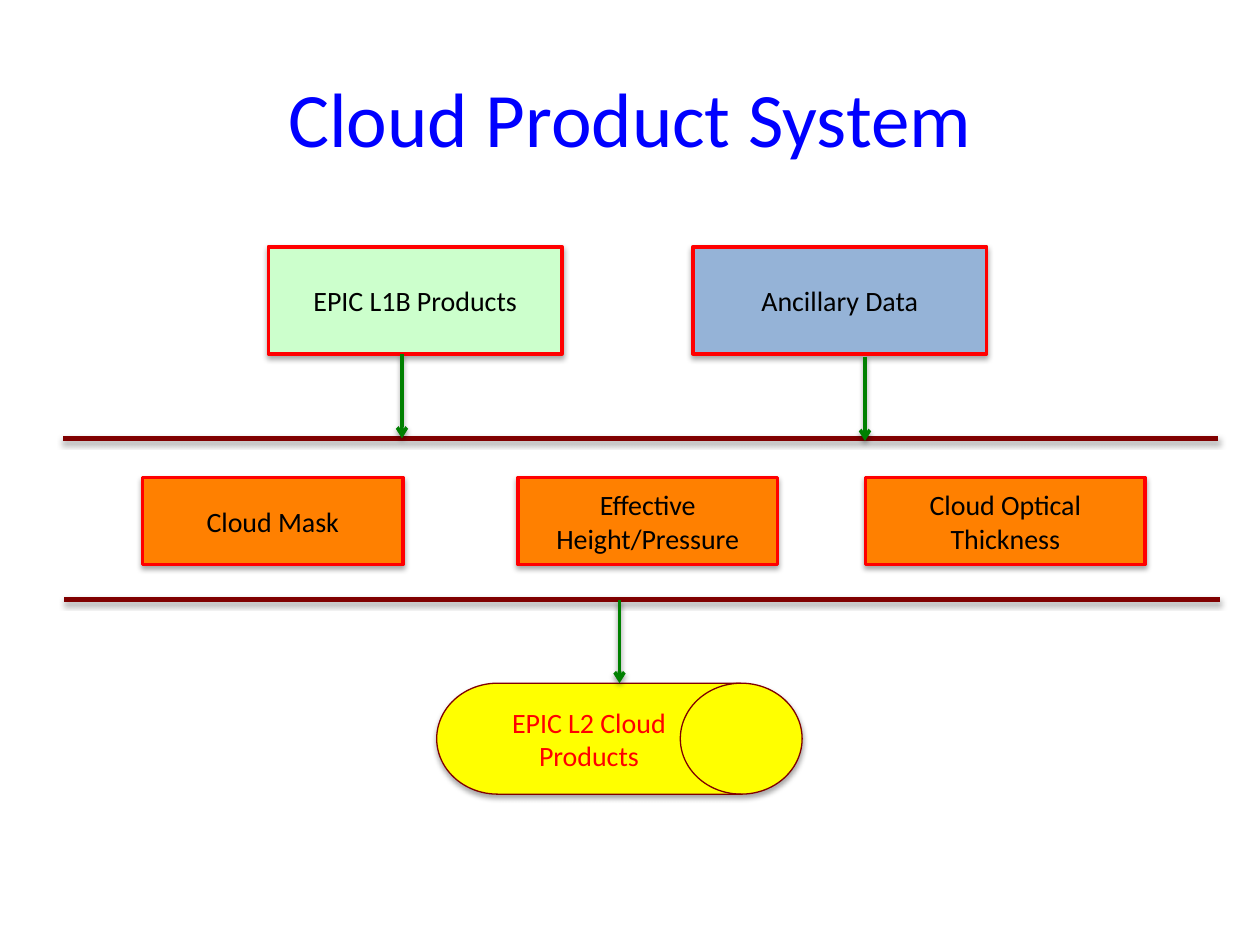
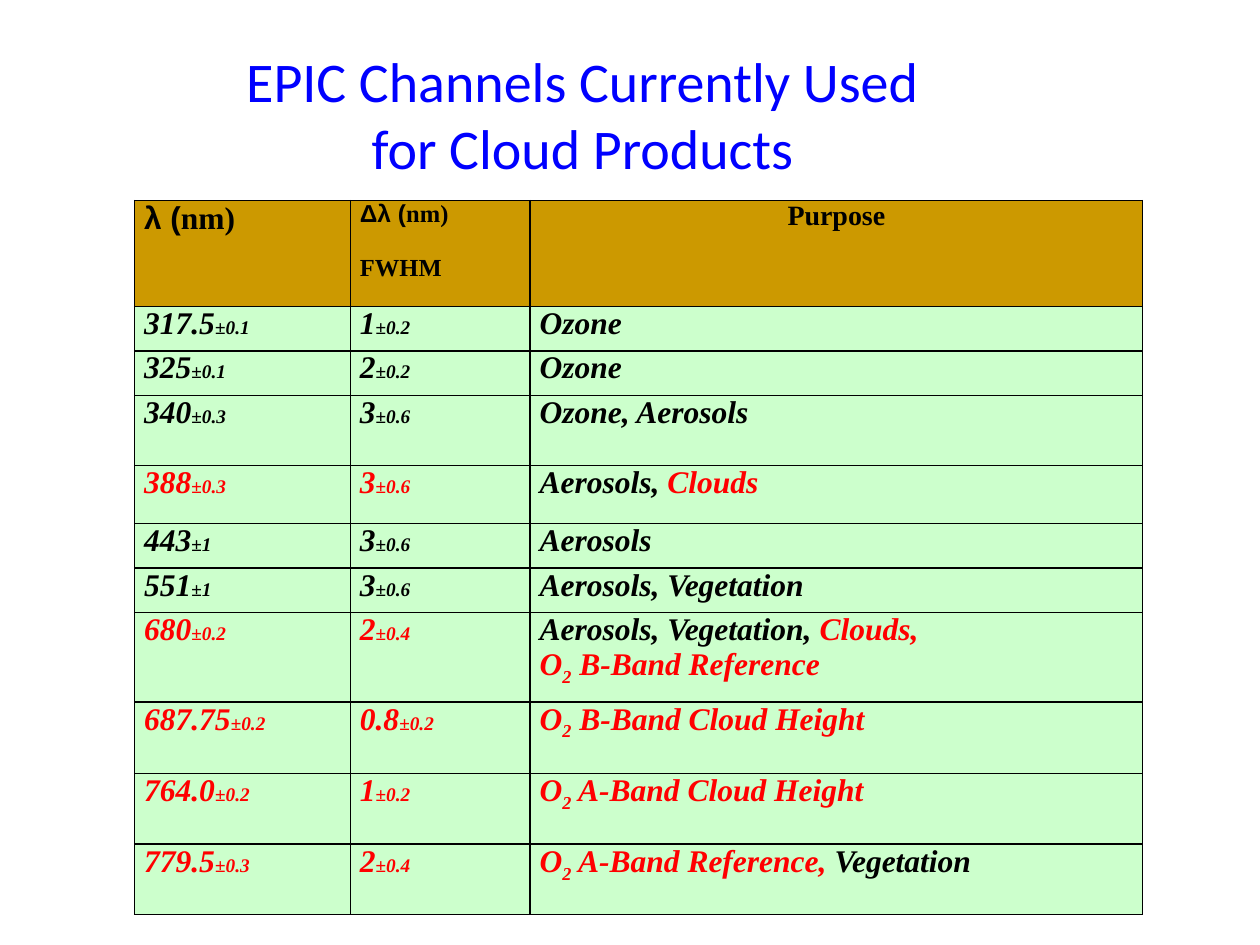
from lxml import etree
from pptx import Presentation
from pptx.dml.color import RGBColor
from pptx.enum.shapes import MSO_CONNECTOR, MSO_SHAPE
from pptx.enum.text import MSO_ANCHOR, PP_ALIGN
from pptx.oxml import parse_xml
from pptx.oxml.ns import nsdecls, qn
from pptx.util import Pt

# Shared look
BLUE, RED, BLACK = "0000FF", "FF0000", "000000"
GREEN, MAROON, ORANGE = "008000", "800000", "FF8000"
MINT, STEEL, YELLOW, GOLD = "CCFFCC", "95B3D7", "FFFF00", "CC9900"
SANS, SERIF, HEAD_FONT = "Calibri", "Times New Roman", "Arial"

# Slide 1: flow diagram, boxes as (text, left, width, fill)
INPUT_TOP, INPUT_H = 141, 61.2
INPUTS = [("EPIC L1B Products", 153.4, 167.8, MINT),
          ("Ancillary Data", 396, 167.8, STEEL)]
STEP_TOP, STEP_H = 272.9, 49.7
STEPS = [("Cloud Mask", 81.4, 149, ORANGE),
         ("Effective Height/Pressure", 295.9, 148.5, ORANGE),
         ("Cloud Optical Thickness", 494.6, 159.8, ORANGE)]
OUTPUT = ("EPIC L2 Cloud Products", 249.6, 208.8, YELLOW)
OUTPUT_TOP, OUTPUT_H = 390.4, 63.4
BAR_W = 660.2
BARS = [(36, 250.6), (36.7, 342.7)]            # left, y
INPUT_ARROWS = [(229.7, 202.3), (494.3, 203.8)]  # x, top
INPUT_ARROW_H = 48.2

# Slide 2: channel table
COL_WIDTHS = [123.3, 102.7, 350]
ROW_HEIGHTS = [60.4, 25.4, 25.4, 40.3, 33, 25.4, 25.4, 51.2, 40.9, 40.3, 40.3]
# A header cell is (size, alignment, paragraphs of (text, font) runs)
HEADER = [
    (18, PP_ALIGN.LEFT, [[("λ (", HEAD_FONT), ("nm)", SERIF)]]),
    (14, PP_ALIGN.LEFT, [[("Δλ (", HEAD_FONT), ("nm)", SERIF)], [("FWHM", SERIF)]]),
    (16, PP_ALIGN.CENTER, [[("Purpose", SERIF)]]),
]
# Purpose paragraphs hold (text, colour) runs; O2 starts an oxygen band name
O2 = [("O", RED), ("2", RED, "sub")]
CHANNELS = [  # wavelength, tolerance, width, tolerance, colour, purpose
    ("317.5", "±0.1", "1", "±0.2", BLACK, [[("Ozone", BLACK)]]),
    ("325", "±0.1", "2", "±0.2", BLACK, [[("Ozone", BLACK)]]),
    ("340", "±0.3", "3", "±0.6", BLACK, [[("Ozone, Aerosols", BLACK)]]),
    ("388", "±0.3", "3", "±0.6", RED, [[("Aerosols,", BLACK), (" Clouds", RED)]]),
    ("443", "±1", "3", "±0.6", BLACK, [[("Aerosols", BLACK)]]),
    ("551", "±1", "3", "±0.6", BLACK, [[("Aerosols, Vegetation", BLACK)]]),
    ("680", "±0.2", "2", "±0.4", RED,
     [[("Aerosols, Vegetation,", BLACK), (" Clouds,", RED)],
      O2 + [(" B-Band Reference", RED)]]),
    ("687.75", "±0.2", "0.8", "±0.2", RED, [O2 + [(" B-Band Cloud Height", RED)]]),
    ("764.0", "±0.2", "1", "±0.2", RED, [O2 + [(" A-Band Cloud Height", RED)]]),
    ("779.5", "±0.3", "2", "±0.4", RED,
     [O2 + [(" A-Band Reference, ", RED), ("Vegetation", BLACK)]]),
]


def rgb(color):
    return RGBColor.from_string(color)


def style(font, size, color, name=SANS, bold=False, italic=False):
    font.size, font.name, font.bold, font.italic = Pt(size), name, bold, italic
    font.color.rgb = rgb(color)


def add_shadow(sp, alpha, dist):
    sp._element.spPr.append(parse_xml(
        f'<a:effectLst {nsdecls("a")}><a:outerShdw blurRad="{Pt(3.1)}" dist="{Pt(dist)}" '
        f'dir="5400000" rotWithShape="0"><a:srgbClr val="{BLACK}">'
        f'<a:alpha val="{alpha * 1000}"/></a:srgbClr></a:outerShdw></a:effectLst>'))


def add_titled_slide(prs, text, box, size, anchor):
    slide = prs.slides.add_slide(prs.slide_layouts[5])
    title = slide.shapes.title
    title.left, title.top, title.width, title.height = map(Pt, box)
    tf = title.text_frame
    tf.text, tf.word_wrap, tf.vertical_anchor = text, True, anchor
    p = tf.paragraphs[0]
    p.alignment = PP_ALIGN.CENTER
    style(p.runs[0].font, size, BLUE)
    return slide


def add_box(slide, box, top, height, kind=MSO_SHAPE.RECTANGLE,
            line=RED, weight=2, color=BLACK):
    text, left, width, fill = box
    sp = slide.shapes.add_shape(kind, Pt(left), Pt(top), Pt(width), Pt(height))
    sp.fill.solid()
    sp.fill.fore_color.rgb = rgb(fill)
    sp.line.color.rgb, sp.line.width = rgb(line), Pt(weight)
    add_shadow(sp, 35, 1.8)
    tf = sp.text_frame
    tf.text, tf.word_wrap, tf.vertical_anchor = text, True, MSO_ANCHOR.MIDDLE
    p = tf.paragraphs[0]
    p.alignment = PP_ALIGN.CENTER
    style(p.runs[0].font, 16, color)
    return sp


def add_line(slide, x1, y1, x2, y2, color, weight, arrow=False):
    line = slide.shapes.add_connector(MSO_CONNECTOR.STRAIGHT, *map(Pt, (x1, y1, x2, y2)))
    line.line.color.rgb, line.line.width = rgb(color), Pt(weight)
    if arrow:
        etree.SubElement(line.line._get_or_add_ln(), qn("a:tailEnd"), type="arrow")
    add_shadow(line, 38, 1.6)
    return line


def add_run(p, text, size, color, name=SERIF, italic=True, sub=False):
    r = p.add_run()
    r.text = text
    style(r.font, size, color, name, True, italic)
    if sub:
        r._r.get_or_add_rPr().set("baseline", "-25000")


def format_cell(cell, fill):
    cell.fill.solid()
    cell.fill.fore_color.rgb = rgb(fill)
    cell.margin_left = cell.margin_right = Pt(5.4)
    cell.margin_top = cell.margin_bottom = 0
    for i, side in enumerate("LRTB"):
        cell._tc.get_or_add_tcPr().insert(i, parse_xml(
            f'<a:ln{side} {nsdecls("a")} w="{Pt(1)}"><a:solidFill>'
            f'<a:srgbClr val="{BLACK}"/></a:solidFill></a:ln{side}>'))


def cell_paragraphs(cell, count):
    tf = cell.text_frame
    for _ in range(count - 1):
        tf.add_paragraph()
    return tf.paragraphs


def build_system(prs):
    slide = add_titled_slide(prs, "Cloud Product System", (36, 21.6, 648, 90), 44,
                             MSO_ANCHOR.MIDDLE)
    for box in STEPS:
        add_box(slide, box, STEP_TOP, STEP_H)
    for box in INPUTS:
        add_box(slide, box, INPUT_TOP, INPUT_H)
    for left, y in BARS:
        add_line(slide, left, y, left + BAR_W, y, MAROON, 3)
    for x, top in INPUT_ARROWS:
        add_line(slide, x, top, x, top + INPUT_ARROW_H, GREEN, 2, arrow=True)
    drum = add_box(slide, OUTPUT, OUTPUT_TOP, OUTPUT_H,
                   MSO_SHAPE.FLOWCHART_DIRECT_ACCESS_STORAGE, MAROON, 0.75, RED)
    x = OUTPUT[1] + OUTPUT[2] / 2
    arrow = add_line(slide, x, BARS[1][1], x, OUTPUT_TOP, GREEN, 2, arrow=True)
    arrow.end_connect(drum, 0)


def build_channels(prs):
    slide = add_titled_slide(prs, "EPIC Channels Currently Used for Cloud Products",
                             (133, 23, 400, 85), 32, MSO_ANCHOR.TOP)
    table = slide.shapes.add_table(
        len(ROW_HEIGHTS), len(COL_WIDTHS), Pt(77), Pt(114.7),
        Pt(sum(COL_WIDTHS)), Pt(sum(ROW_HEIGHTS))).table
    table.first_row = table.horz_banding = False
    for col, width in zip(table.columns, COL_WIDTHS):
        col.width = Pt(width)
    for row, height in zip(table.rows, ROW_HEIGHTS):
        row.height = Pt(height)

    # Header row
    for cell, (size, align, lines) in zip(table.rows[0].cells, HEADER):
        format_cell(cell, GOLD)
        for i, (p, runs) in enumerate(zip(cell_paragraphs(cell, len(lines)), lines)):
            p.alignment = align
            if i:
                p.space_before = Pt(15)
            for text, name in runs:
                add_run(p, text, size, BLACK, name, italic=False)

    # One row per channel
    for r, (wave, wave_tol, width, width_tol, color, purpose) in enumerate(CHANNELS, 1):
        cells = [table.cell(r, c) for c in range(len(COL_WIDTHS))]
        for cell in cells:
            format_cell(cell, MINT)
        for cell, value, tol in zip(cells, (wave, width), (wave_tol, width_tol)):
            p = cell.text_frame.paragraphs[0]
            add_run(p, value, 18, color)
            add_run(p, tol, 11, color)
        for p, runs in zip(cell_paragraphs(cells[2], len(purpose)), purpose):
            for text, run_color, *sub in runs:
                add_run(p, text, 18, run_color, sub=bool(sub))


def main():
    prs = Presentation()
    prs.slide_width, prs.slide_height = Pt(720), Pt(540)
    build_system(prs)
    build_channels(prs)
    prs.save("out.pptx")


if __name__ == "__main__":
    main()
